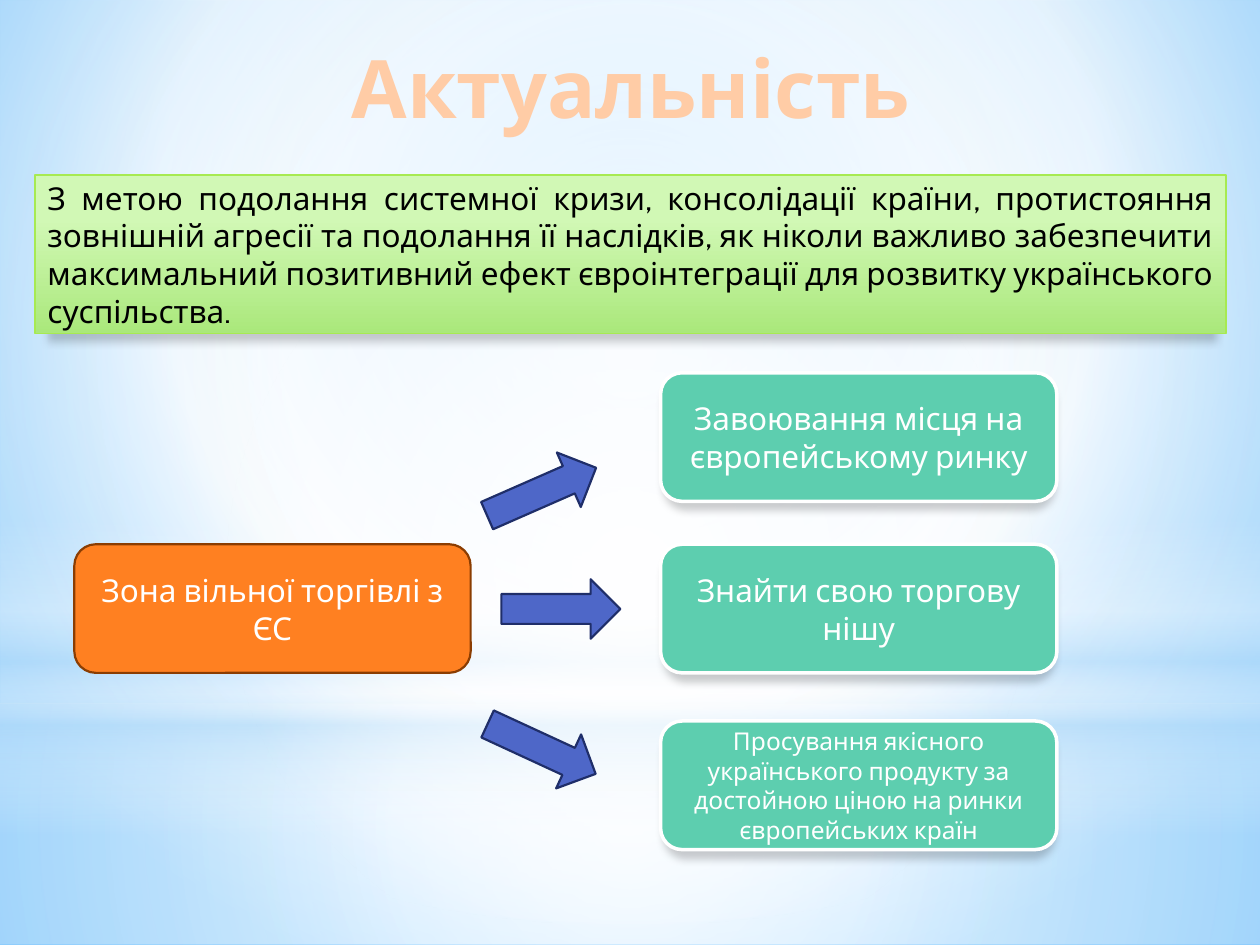
import lxml.etree
import pptx
import pptx.dml.color
import pptx.enum.shapes
import pptx.enum.text
import pptx.oxml.ns
import pptx.util

Pt = pptx.util.Pt
RGBColor = pptx.dml.color.RGBColor
SHAPE = pptx.enum.shapes.MSO_SHAPE
ALIGN = pptx.enum.text.PP_ALIGN
MIDDLE = pptx.enum.text.MSO_ANCHOR.MIDDLE
SubElement = lxml.etree.SubElement
qn = pptx.oxml.ns.qn

FONT = "Cabin"
WHITE = RGBColor(0xFF, 0xFF, 0xFF)
BLACK = RGBColor(0x00, 0x00, 0x00)
SKY = RGBColor(0x9E, 0xD5, 0xFF)
DEEP_SKY = RGBColor(0x5B, 0xB9, 0xFF)
PALE_BLUE = RGBColor(0xB4, 0xDC, 0xFA)
PEACH = RGBColor(0xFF, 0xCC, 0xA6)
NAVY = RGBColor(0x17, 0x20, 0x4F)
LIGHT_GREEN = RGBColor(0xD1, 0xF8, 0xB5)
GREEN = RGBColor(0xAA, 0xE8, 0x7B)
GREEN_EDGE = RGBColor(0xA7, 0xEA, 0x52)
ORANGE = RGBColor(0xFF, 0x80, 0x21)
BROWN = RGBColor(0x8B, 0x3D, 0x02)
TEAL = RGBColor(0x5D, 0xCE, 0xAF)
BLUE = RGBColor(0x4E, 0x67, 0xC8)
DARK_BLUE = RGBColor(0x1F, 0x2E, 0x69)


def set_gradient(fill, properties, stops, center=None):
    fill.gradient()
    gradient = properties.find(qn("a:gradFill"))
    gradient.clear()
    gradient.set("rotWithShape", "1")
    stop_list = SubElement(gradient, qn("a:gsLst"))
    for position, color, opacity in stops:
        stop = SubElement(stop_list, qn("a:gs"), pos=str(position * 1000))
        tint = SubElement(stop, qn("a:srgbClr"), val=str(color))
        if opacity < 100:
            SubElement(tint, qn("a:alpha"), val=str(opacity * 1000))
    if center:
        circle = SubElement(gradient, qn("a:path"), path="circle")
        edges = {side: str(share * 1000) for side, share in zip("ltrb", center)}
        SubElement(circle, qn("a:fillToRect"), **edges)
    else:
        SubElement(gradient, qn("a:lin"), ang="5400000", scaled="0")


def add_box(kind, frame, color, edge=None, edge_width=0, text="", size=18, shadow=False):
    box = slide.shapes.add_shape(kind, *map(Pt, frame))
    box.shadow.inherit = False
    box.fill.solid()
    box.fill.fore_color.rgb = color
    if edge is None:
        box.line.fill.background()
    else:
        box.line.color.rgb = edge
        box.line.width = Pt(edge_width)
    if shadow:
        effects = box.element.spPr.find(qn("a:effectLst"))
        outer = SubElement(effects, qn("a:outerShdw"), blurRad=str(Pt(5)), dist=str(Pt(4)),
                           dir="5400000", sx="98000", sy="98000", algn="b", rotWithShape="0")
        tint = SubElement(outer, qn("a:srgbClr"), val=str(BLACK))
        SubElement(tint, qn("a:alpha"), val="20000")
    if text:
        box.text_frame.word_wrap = True
        box.text_frame.vertical_anchor = MIDDLE
        paragraph = box.text_frame.paragraphs[0]
        paragraph.text = text
        paragraph.alignment = ALIGN.CENTER
        paragraph.font.name = FONT
        paragraph.font.size = Pt(size)
        paragraph.font.color.rgb = WHITE
    return box


deck = pptx.Presentation()
deck.slide_width = Pt(720)
deck.slide_height = Pt(540)
slide = deck.slides.add_slide(deck.slide_layouts[5])

backdrop = slide.background.fill
backdrop.gradient()
set_gradient(backdrop, slide.element.find(".//" + qn("p:bgPr")),
             [(0, SKY, 100), (60, WHITE, 100), (100, DEEP_SKY, 100)], (20, 10, 20, 60))

middle = (50, 50, 50, 50)
glows = [
    (SHAPE.RECTANGLE, (0, 402, 720, 138), middle,
     [(0, WHITE, 91), (37, WHITE, 76), (100, PALE_BLUE, 79)]),
    (SHAPE.RECTANGLE, (0, 0, 720, 402), middle,
     [(0, WHITE, 89), (48, WHITE, 62), (100, PALE_BLUE, 79)]),
    (SHAPE.RECTANGLE, (0, 297, 720, 180), None,
     [(0, WHITE, 0), (29, WHITE, 30), (45, PALE_BLUE, 40),
      (55, WHITE, 26), (65, PALE_BLUE, 60), (100, WHITE, 0)]),
    (SHAPE.OVAL, (0, 126, 720, 402), middle, [(0, WHITE, 100), (56, WHITE, 0)]),
]
for kind, frame, center, stops in glows:
    glow = add_box(kind, frame, WHITE)
    set_gradient(glow.fill, glow.element.spPr, stops, center)

title = slide.shapes.title
title.element.getparent().append(title.element)
title.left, title.top, title.width, title.height = map(Pt, (36.5, 10, 648, 78.5))
title.text_frame.vertical_anchor = MIDDLE
heading = title.text_frame.paragraphs[0]
heading.alignment = ALIGN.CENTER
word = heading.add_run()
word.text = "Актуальність"
word.font.name = FONT
word.font.size = Pt(46)
word.font.bold = True
word.font.color.rgb = PEACH
outline = lxml.etree.Element(qn("a:ln"), w=str(Pt(1)))
outline_fill = SubElement(outline, qn("a:solidFill"))
SubElement(outline_fill, qn("a:srgbClr"), val=str(NAVY))
title.element.find(".//" + qn("a:rPr")).insert(0, outline)

purpose = add_box(
    SHAPE.RECTANGLE, (20, 100, 680.5, 90.5), GREEN, GREEN_EDGE, 0.75,
    "З метою подолання системної кризи, консолідації країни, протистояння зовнішній "
    "агресії та подолання її наслідків, як ніколи важливо забезпечити максимальний "
    "позитивний ефект євроінтеграції для розвитку українського суспільства.", shadow=True)
set_gradient(purpose.fill, purpose.element.spPr, [(28, LIGHT_GREEN, 100), (100, GREEN, 100)])
purpose.text_frame.paragraphs[0].alignment = ALIGN.JUSTIFY
purpose.text_frame.paragraphs[0].font.color.rgb = BLACK

add_box(SHAPE.ROUNDED_RECTANGLE, (42.5, 311, 226.5, 73.5), ORANGE, BROWN, 1.25,
        "Зона вільної торгівлі з ЄС")

goals = [
    (213, 18, "Завоювання місця на європейському ринку"),
    (311, 18, "Знайти свою торгову нішу"),
    (412, 14, "Просування якісного українського продукту за достойною ціною "
              "на ринки європейських країн"),
]
for top, size, text in goals:
    add_box(SHAPE.ROUNDED_RECTANGLE, (377.5, top, 226.5, 73.5), TEAL, WHITE, 2,
            text, size, shadow=True)

for left, top, angle in [(286.5, 331, 0), (275.5, 411, 24.8), (275.5, 264, 336.3)]:
    arrow = add_box(SHAPE.RIGHT_ARROW, (left, top, 68, 34), BLUE, DARK_BLUE, 1.25)
    arrow.rotation = angle

deck.save("out.pptx")
